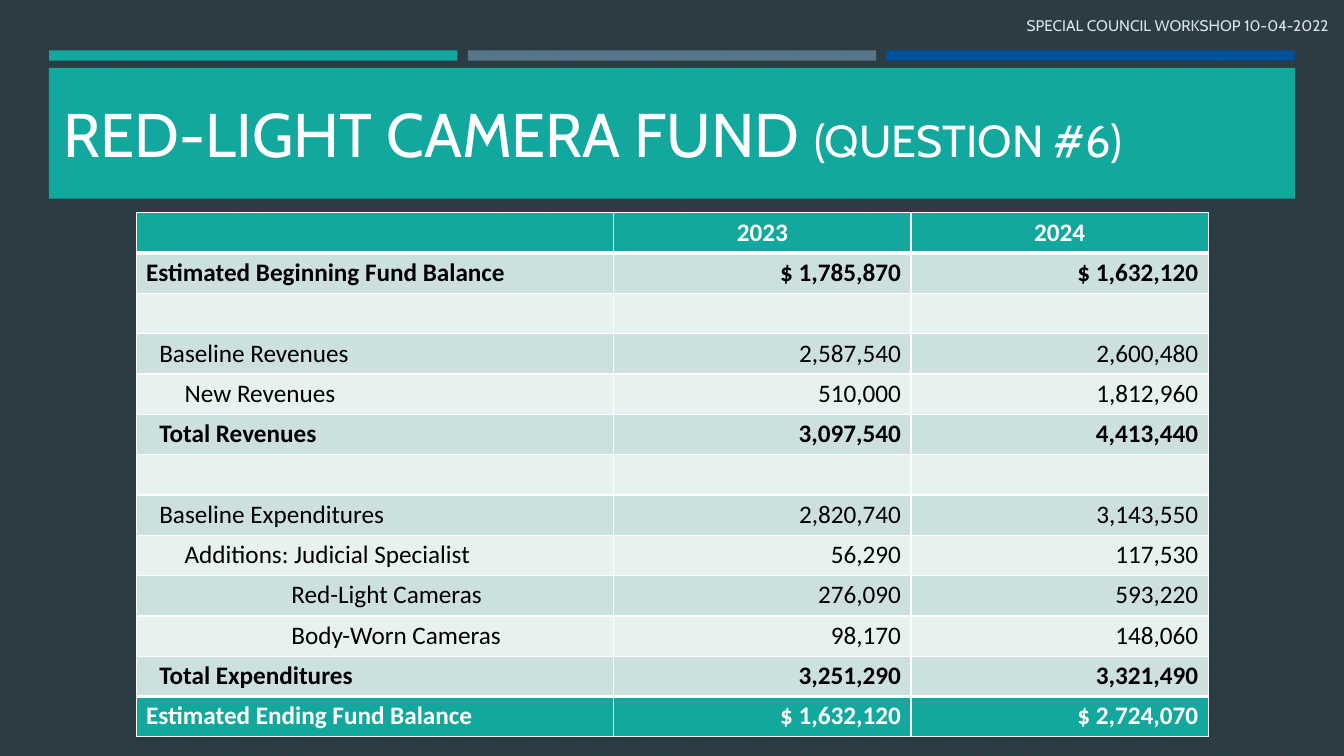
from dataclasses import dataclass

from lxml import etree
from pptx import Presentation
from pptx import util as u
from pptx.dml.color import RGBColor
from pptx.enum import dml, shapes, text
from pptx.oxml.ns import qn


@dataclass(frozen=True)
class Theme:
    teal: str = "13A89E"
    slate: str = "577689"
    blue: str = "00529B"
    backdrop: str = "2C3B44"
    confetti: str = "09544F"
    white: str = "FFFFFF"
    black: str = "000000"
    pale: str = "DCE4E9"
    band_dark: str = "CCE1DF"
    band_light: str = "E7F1F0"
    heading_font: str = "Cabin"
    table_font: str = "Calibri"
    title_size: int = 44
    question_size: int = 32
    workshop_size: int = 11
    table_size: int = 18
    thin: int = 1
    thick: int = 3


THEME = Theme()
WORKSHOP = "SPECIAL COUNCIL WORKSHOP 10-04-2022"
TITLE = [("RED-LIGHT CAMERA FUND ", THEME.title_size), ("(QUESTION #6)", THEME.question_size)]
BARS = [THEME.teal, THEME.slate, THEME.blue]
INDENTS = [0, 0.33, 0.97, 3.66]
COLUMNS = [12.04, 7.49, 7.49]
FUND = [
    ("", "2023", "2024", 0, True),
    ("Estimated Beginning Fund Balance", "$ 1,785,870", "$ 1,632,120", 0, True),
    ("", "", "", 0, False),
    ("Baseline Revenues", "2,587,540", "2,600,480", 1, False),
    ("New Revenues", "510,000", "1,812,960", 2, False),
    ("Total Revenues", "3,097,540", "4,413,440", 1, True),
    ("", "", "", 0, False),
    ("Baseline Expenditures", "2,820,740", "3,143,550", 1, False),
    ("Additions: Judicial Specialist", "56,290", "117,530", 2, False),
    ("Red-Light Cameras", "276,090", "593,220", 3, False),
    ("Body-Worn Cameras", "98,170", "148,060", 3, False),
    ("Total Expenditures", "3,251,290", "3,321,490", 1, True),
    ("Estimated Ending Fund Balance", "$ 1,632,120", "$ 2,724,070", 0, True),
]


def color(value):
    return RGBColor.from_string(value)


def add_run(paragraph, content, size, font, fill, bold=False):
    run = paragraph.add_run()
    run.text = content
    run.font.size = u.Pt(size)
    run.font.name = font
    run.font.bold = bold
    run.font.color.rgb = color(fill)


def add_block(slide, left, top, width, height, fill):
    shape = slide.shapes.add_shape(
        shapes.MSO_SHAPE.RECTANGLE, u.Cm(left), u.Cm(top), u.Cm(width), u.Cm(height))
    shape.shadow.inherit = False
    shape.fill.solid()
    shape.fill.fore_color.rgb = color(fill)
    shape.line.fill.background()


def add_text(slide, left, top, width, height, runs, fill, alignment):
    shape = slide.shapes.add_textbox(u.Cm(left), u.Cm(top), u.Cm(width), u.Cm(height))
    frame = shape.text_frame
    frame.word_wrap = True
    frame.vertical_anchor = text.MSO_ANCHOR.MIDDLE
    paragraph = frame.paragraphs[0]
    paragraph.alignment = alignment
    for content, size in runs:
        add_run(paragraph, content, size, THEME.heading_font, fill)


def add_borders(cell, top, bottom):
    properties = cell._tc.get_or_add_tcPr()
    widths = {"a:lnL": THEME.thin, "a:lnR": THEME.thin, "a:lnT": top, "a:lnB": bottom}
    for tag, width in widths.items():
        line = etree.SubElement(properties, qn(tag), w=str(u.Pt(width)))
        fill = etree.SubElement(line, qn("a:solidFill"))
        etree.SubElement(fill, qn("a:srgbClr"), val=THEME.white)


def add_fund_table(slide, left, top, height):
    last = len(FUND) - 1
    table = slide.shapes.add_table(
        len(FUND), len(COLUMNS), u.Cm(left), u.Cm(top), u.Cm(sum(COLUMNS)), u.Cm(height)).table
    for column, width in zip(table.columns, COLUMNS):
        column.width = u.Cm(width)
    for row, (*contents, level, bold) in enumerate(FUND):
        table.rows[row].height = u.Cm(height / len(FUND))
        emphasis = row in (0, last)
        band = THEME.band_dark if row % 2 else THEME.band_light
        above = THEME.thick if row in (1, last) else THEME.thin
        below = THEME.thick if row in (0, last - 1) else THEME.thin
        for column, content in enumerate(contents):
            cell = table.cell(row, column)
            add_borders(cell, above, below)
            cell.fill.solid()
            cell.fill.fore_color.rgb = color(THEME.teal if emphasis else band)
            cell.margin_top = cell.margin_bottom = u.Cm(0.11)
            paragraph = cell.text_frame.paragraphs[0]
            if column:
                paragraph.alignment = text.PP_ALIGN.RIGHT if row else text.PP_ALIGN.CENTER
            elif level:
                paragraph._p.get_or_add_pPr().set("marL", str(u.Cm(INDENTS[level])))
            if content:
                add_run(paragraph, content, THEME.table_size, THEME.table_font,
                        THEME.white if emphasis else THEME.black, bold)


def main():
    presentation = Presentation()
    presentation.slide_width = u.Cm(33.87)
    presentation.slide_height = u.Cm(19.05)
    slide = presentation.slides.add_slide(presentation.slide_layouts[6])
    backdrop = slide.background.fill
    backdrop.patterned()
    backdrop.pattern = dml.MSO_PATTERN.SMALL_CONFETTI
    backdrop.fore_color.rgb = color(THEME.confetti)
    backdrop.back_color.rgb = color(THEME.backdrop)

    for index, fill in enumerate(BARS):
        add_block(slide, 1.24 + index * 10.55, 1.27, 10.29, 0.26, fill)
    add_block(slide, 1.23, 1.71, 31.41, 3.3, THEME.teal)
    add_text(slide, 1.35, 1.93, 31.6, 2.82, TITLE, THEME.white, text.PP_ALIGN.LEFT)
    add_text(slide, 25.5, 0.28, 8.36, 0.74, [(WORKSHOP, THEME.workshop_size)],
             THEME.pale, text.PP_ALIGN.CENTER)
    add_fund_table(slide, 3.43, 5.36, 13.21)
    presentation.save("out.pptx")


if __name__ == "__main__":
    main()
